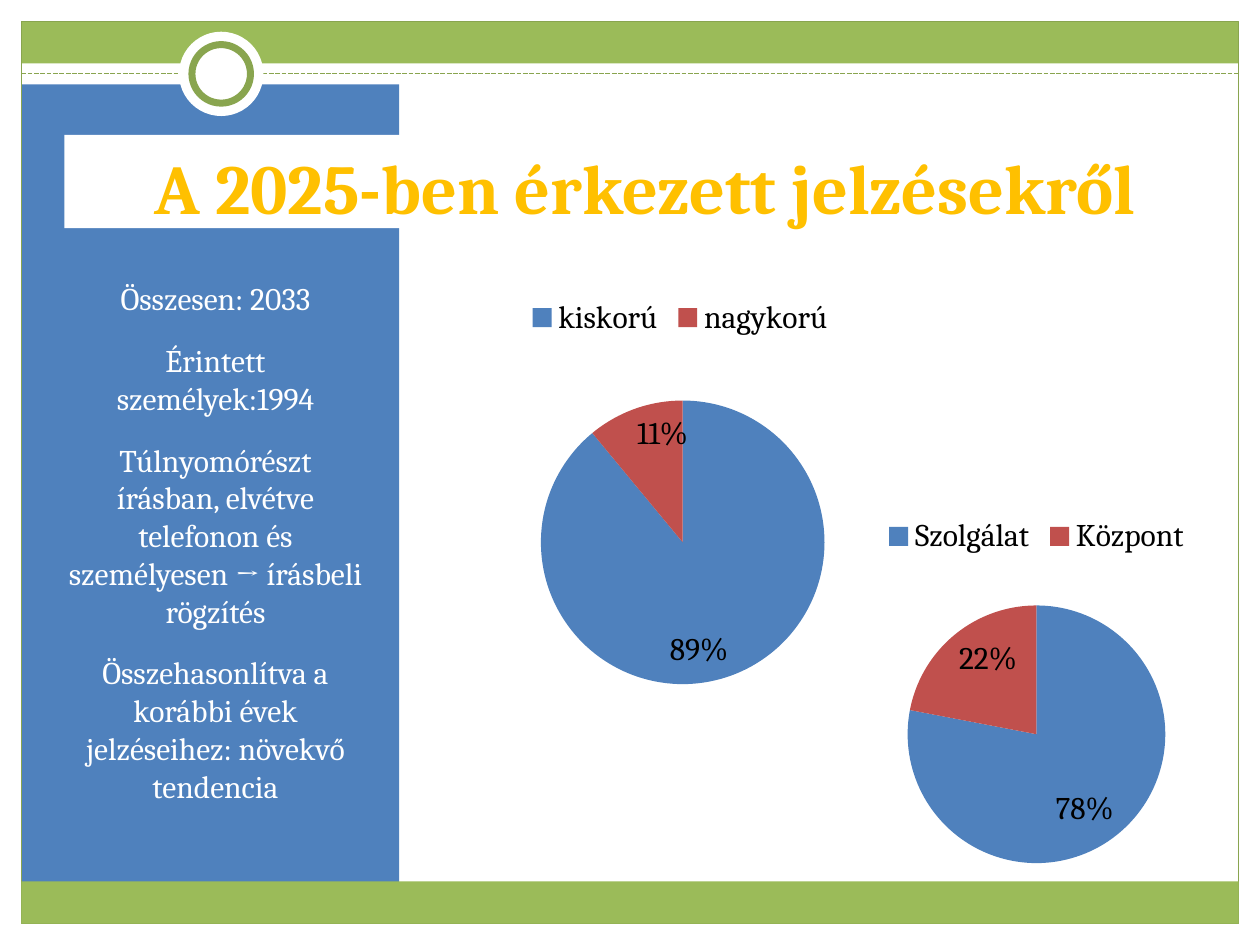
from dataclasses import dataclass

from lxml.etree import SubElement
from pptx import Presentation
from pptx.chart.data import CategoryChartData
from pptx.dml.color import RGBColor
from pptx.enum.chart import XL_CHART_TYPE, XL_LABEL_POSITION, XL_LEGEND_POSITION
from pptx.enum.dml import MSO_LINE
from pptx.enum.shapes import MSO_CONNECTOR, MSO_SHAPE
from pptx.enum.text import MSO_ANCHOR, MSO_AUTO_SIZE, PP_ALIGN
from pptx.oxml.ns import qn
from pptx.util import Cm, Pt


@dataclass(frozen=True)
class Theme:
    """Colours, font and type sizes of the slide."""
    white: RGBColor = RGBColor.from_string("FFFFFF")
    black: RGBColor = RGBColor.from_string("000000")
    green: RGBColor = RGBColor.from_string("9BBB59")
    dark_green: RGBColor = RGBColor.from_string("89A54F")
    blue: RGBColor = RGBColor.from_string("4F81BD")
    red: RGBColor = RGBColor.from_string("C0504D")
    gold: RGBColor = RGBColor.from_string("FFC000")
    font: str = "Cambria"
    title_size: Pt = Pt(40)
    body_size: Pt = Pt(18)


@dataclass(frozen=True)
class Box:
    """A rectangle in centimetres."""
    left: float
    top: float
    width: float
    height: float

    def lengths(self):
        """Return left, top, width and height as lengths."""
        return Cm(self.left), Cm(self.top), Cm(self.width), Cm(self.height)


THEME = Theme()
FACTS = (
    "Összesen: 2033",
    "Érintett személyek:1994",
    "Túlnyomórészt írásban, elvétve telefonon és személyesen → írásbeli rögzítés",
    "Összehasonlítva a korábbi évek jelzéseihez: növekvő tendencia",
)


def style_font(font, size, color, bold=False):
    """Apply the theme font with a size and colour."""
    font.name, font.size, font.bold = THEME.font, size, bold
    font.color.rgb = color


def add_panel(slide, box, fill=None, line=None, line_width=0.75, kind=MSO_SHAPE.RECTANGLE):
    """Add a flat shape with an optional fill and outline."""
    shape = slide.shapes.add_shape(kind, *box.lengths())
    shape.shadow.inherit = False
    if fill is None:
        shape.fill.background()
    else:
        shape.fill.solid()
        shape.fill.fore_color.rgb = fill
    if line is None:
        shape.line.fill.background()
    else:
        shape.line.color.rgb = line
        shape.line.width = Pt(line_width)
    return shape


def add_ring(slide, box):
    """Add the white disc with a green ring inside it."""
    inset = 0.26
    inner = Box(box.left + inset, box.top + inset, box.width - 2 * inset, box.height - 2 * inset)
    add_panel(slide, box, THEME.white, kind=MSO_SHAPE.OVAL)
    add_panel(slide, inner, THEME.white, THEME.dark_green, 4, MSO_SHAPE.OVAL)


def add_dashed_rule(slide, left, right, top):
    """Add the dashed horizontal rule."""
    rule = slide.shapes.add_connector(
        MSO_CONNECTOR.STRAIGHT, Cm(left), Cm(top), Cm(right), Cm(top))
    rule.line.color.rgb = THEME.dark_green
    rule.line.width = Pt(0.9)
    rule.line.dash_style = MSO_LINE.SQUARE_DOT
    SubElement(rule._element.spPr, qn("a:effectLst"))


def add_frame(slide, box):
    """Add the bands, side panel, outline, rule and ring of the frame."""
    right, bottom = box.left + box.width, box.top + box.height
    band = 0.85
    add_panel(slide, Box(box.left, box.top, box.width, band), THEME.green)
    add_panel(slide, Box(box.left, box.top + 1.27, 7.62, 16.3), THEME.blue)
    add_panel(slide, box, line=THEME.dark_green)
    add_dashed_rule(slide, box.left, right, box.top + 1.05)
    add_ring(slide, Box(box.left + 3.18, box.top + 0.21, 1.7, 1.7))
    add_panel(slide, Box(box.left, bottom - band, box.width, band), THEME.green)


def place_title(slide, box, text):
    """Place the title on its white strip in front of the frame."""
    title = slide.shapes.title
    title.left, title.top, title.width, title.height = box.lengths()
    title.fill.solid()
    title.fill.fore_color.rgb = THEME.white
    frame = title.text_frame
    frame.text = text
    frame.word_wrap = True
    frame.auto_size = MSO_AUTO_SIZE.NONE
    frame.vertical_anchor = MSO_ANCHOR.BOTTOM
    frame.margin_top = frame.margin_bottom = 0
    paragraph = frame.paragraphs[0]
    paragraph.alignment = PP_ALIGN.CENTER
    style_font(paragraph.font, THEME.title_size, THEME.gold, bold=True)
    title._element.getparent().append(title._element)


def add_facts(slide, box, facts):
    """Add the centred facts of the side panel."""
    frame = slide.shapes.add_textbox(*box.lengths()).text_frame
    frame.word_wrap = True
    for index, fact in enumerate(facts):
        paragraph = frame.add_paragraph() if index else frame.paragraphs[0]
        paragraph.text = fact
        paragraph.alignment = PP_ALIGN.CENTER
        paragraph.space_before = Pt(3.6 if index else 0)
        paragraph.space_after = Pt(10)
        style_font(paragraph.font, THEME.body_size, THEME.white)


def set_plot_area(chart, area):
    """Fix the inner plot area as fractions of the chart."""
    plot_area = chart._chartSpace.chart.plotArea
    layout = plot_area.find(qn("c:layout"))
    if layout is None:
        layout = SubElement(plot_area, qn("c:layout"))
        plot_area.insert(0, layout)
    manual = SubElement(layout, qn("c:manualLayout"))
    settings = dict(layoutTarget="inner", xMode="edge", yMode="edge")
    settings.update(zip("xywh", map(str, area)))
    for name, value in settings.items():
        SubElement(manual, qn(f"c:{name}")).set("val", value)


def add_pie(slide, box, shares, area):
    """Add a two-slice pie with percentages and a legend on top."""
    data = CategoryChartData()
    data.categories = list(shares)
    data.add_series("Series 1", list(shares.values()))
    chart = slide.shapes.add_chart(XL_CHART_TYPE.PIE, *box.lengths(), data).chart
    chart.has_title = False
    style_font(chart.font, THEME.body_size, THEME.black)
    chart.has_legend = True
    chart.legend.position = XL_LEGEND_POSITION.TOP
    chart.legend.include_in_layout = False
    plot = chart.plots[0]
    plot.vary_by_categories = True
    for index, color in enumerate((THEME.blue, THEME.red)):
        fill = plot.series[0].points[index].format.fill
        fill.solid()
        fill.fore_color.rgb = color
    plot.has_data_labels = True
    labels = plot.data_labels
    labels.show_value = False
    labels.show_percentage = True
    labels.number_format, labels.number_format_is_linked = "0%", False
    labels.position = XL_LABEL_POSITION.INSIDE_END
    set_plot_area(chart, area)


def main():
    """Build and save the slide."""
    presentation = Presentation()
    presentation.slide_width, presentation.slide_height = Cm(25.4), Cm(19.05)
    slide = presentation.slides.add_slide(presentation.slide_layouts[5])
    add_frame(slide, Box(0.43, 0.43, 24.54, 18.19))
    place_title(slide, Box(1.3, 2.72, 23.39, 1.88), "A 2025-ben érkezett jelzésekről")
    add_facts(slide, Box(1.07, 5.51, 6.55, 11.51), FACTS)
    add_pie(slide, Box(8.31, 5.72, 10.8, 8.41), {"kiskorú": 89, "nagykorú": 11},
            (0.24, 0.28, 0.53, 0.68))
    add_pie(slide, Box(15.7, 10.13, 10.39, 8.2), {"Szolgálat": 78, "Központ": 22},
            (0.25, 0.25, 0.5, 0.64))
    presentation.save("out.pptx")


if __name__ == "__main__":
    main()
